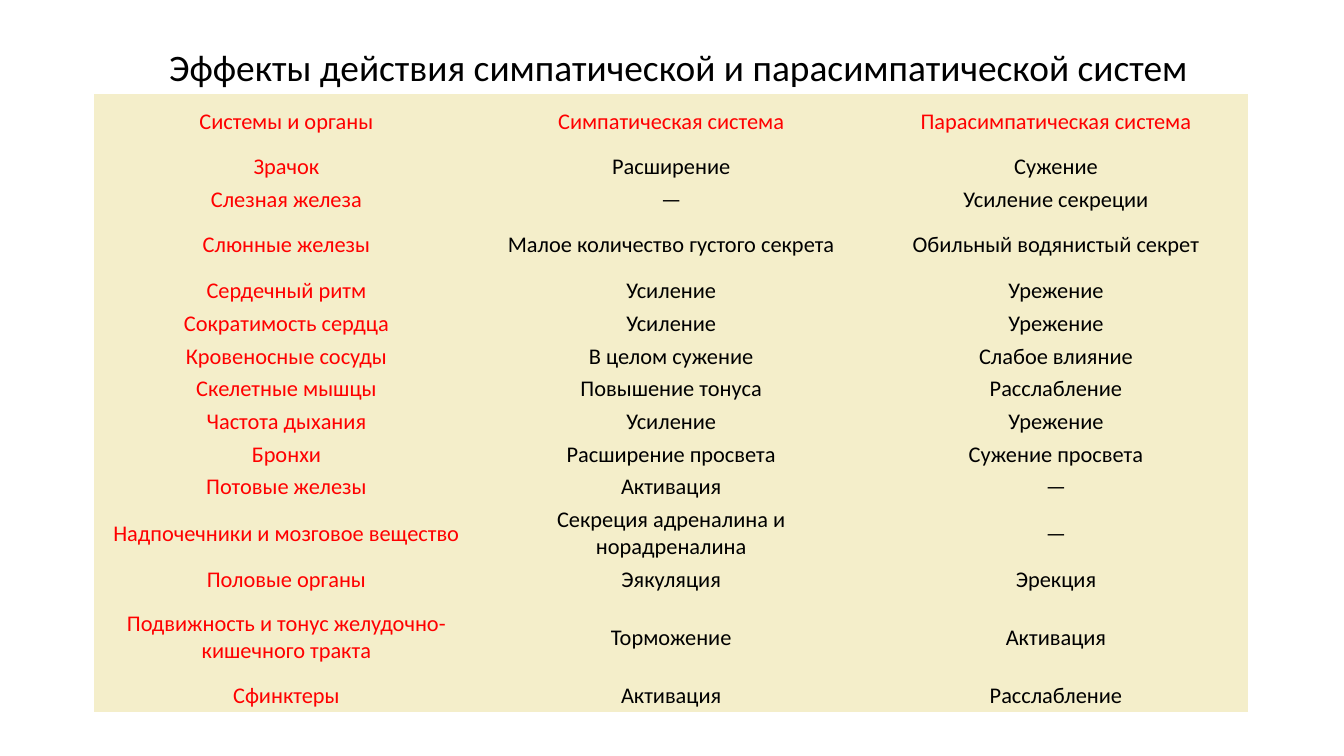
from pptx import Presentation
from pptx.dml.color import RGBColor
from pptx.enum.text import MSO_ANCHOR, PP_ALIGN
from pptx.util import Inches, Pt

CENTER = PP_ALIGN.CENTER
MIDDLE = MSO_ANCHOR.MIDDLE
TITLE_ONLY = 5
FONT = "Calibri"
COLORS = {"heading": "FF0000", "text": "000000", "cell": "F4EECA"}
NO_STYLE_NO_GRID = "{2D5ABB26-0587-4C30-8999-92F81FD0307C}"

SLIDE_WIDTH = 10
TITLE = "Эффекты действия симпатической и парасимпатической систем"
EFFECTS = [
    ("Системы и органы", "Симпатическая система", "Парасимпатическая система"),
    ("Зрачок", "Расширение", "Сужение"),
    ("Слезная железа", "—", "Усиление секреции"),
    ("Слюнные железы", "Малое количество густого секрета", "Обильный водянистый секрет"),
    ("Сердечный ритм", "Усиление", "Урежение"),
    ("Сократимость сердца", "Усиление", "Урежение"),
    ("Кровеносные сосуды", "В целом сужение", "Слабое влияние"),
    ("Скелетные мышцы", "Повышение тонуса", "Расслабление"),
    ("Частота дыхания", "Усиление", "Урежение"),
    ("Бронхи", "Расширение просвета", "Сужение просвета"),
    ("Потовые железы", "Активация", "—"),
    ("Надпочечники и мозговое вещество", "Секреция адреналина и норадреналина", "—"),
    ("Половые органы", "Эякуляция", "Эрекция"),
    ("Подвижность и тонус желудочно-кишечного тракта", "Торможение", "Активация"),
    ("Сфинктеры", "Активация", "Расслабление"),
]
ROW_HEIGHT = 0.24
TALL_ROWS = {0: 0.42, 3: 0.44, 11: 0.44, 13: 0.62}
TABLE_WIDTH = 8.59
CELL_MARGIN = 0.02


def format_font(font, size, color):
    font.name = FONT
    font.size = Pt(size)
    font.color.rgb = RGBColor.from_string(COLORS[color])


def set_title(slide):
    """Fill the title; its large leading space sets the line height."""
    title = slide.shapes.title
    title.left, title.top = Inches(0.5), Inches(0.23)
    title.width, title.height = Inches(9), Inches(0.4)
    title.text_frame.vertical_anchor = MIDDLE
    heading = title.text_frame.paragraphs[0]
    heading.alignment = CENTER
    for text, size in ((" ", 32), (TITLE, 20)):
        run = heading.add_run()
        run.text = text
        format_font(run.font, size, "text")


def fill_cell(cell, text, color):
    cell.text = text
    cell.fill.solid()
    cell.fill.fore_color.rgb = RGBColor.from_string(COLORS["cell"])
    cell.vertical_anchor = MIDDLE
    cell.margin_left = cell.margin_right = Inches(CELL_MARGIN)
    cell.margin_top = cell.margin_bottom = Inches(CELL_MARGIN)
    paragraph = cell.text_frame.paragraphs[0]
    paragraph.alignment = CENTER
    format_font(paragraph.font, 12, color)


def add_effects_table(slide):
    heights = [TALL_ROWS.get(row, ROW_HEIGHT) for row in range(len(EFFECTS))]
    column_count = len(EFFECTS[0])
    table = slide.shapes.add_table(
        len(EFFECTS), column_count, Inches(0.7), Inches(0.7),
        Inches(TABLE_WIDTH), Inches(sum(heights)),
    ).table
    table.first_row = table.horz_banding = False
    table._tbl.tblPr[0].text = NO_STYLE_NO_GRID
    for column in table.columns:
        column.width = Inches(TABLE_WIDTH / column_count)
    for row, (texts, height) in enumerate(zip(EFFECTS, heights)):
        table.rows[row].height = Inches(height)
        for column, text in enumerate(texts):
            color = "heading" if row == 0 or column == 0 else "text"
            fill_cell(table.cell(row, column), text, color)


def main():
    presentation = Presentation()
    presentation.slide_width = Inches(SLIDE_WIDTH)
    presentation.slide_height = Inches(SLIDE_WIDTH * 9 / 16)
    slide = presentation.slides.add_slide(presentation.slide_layouts[TITLE_ONLY])
    set_title(slide)
    add_effects_table(slide)
    presentation.save("out.pptx")


if __name__ == "__main__":
    main()
